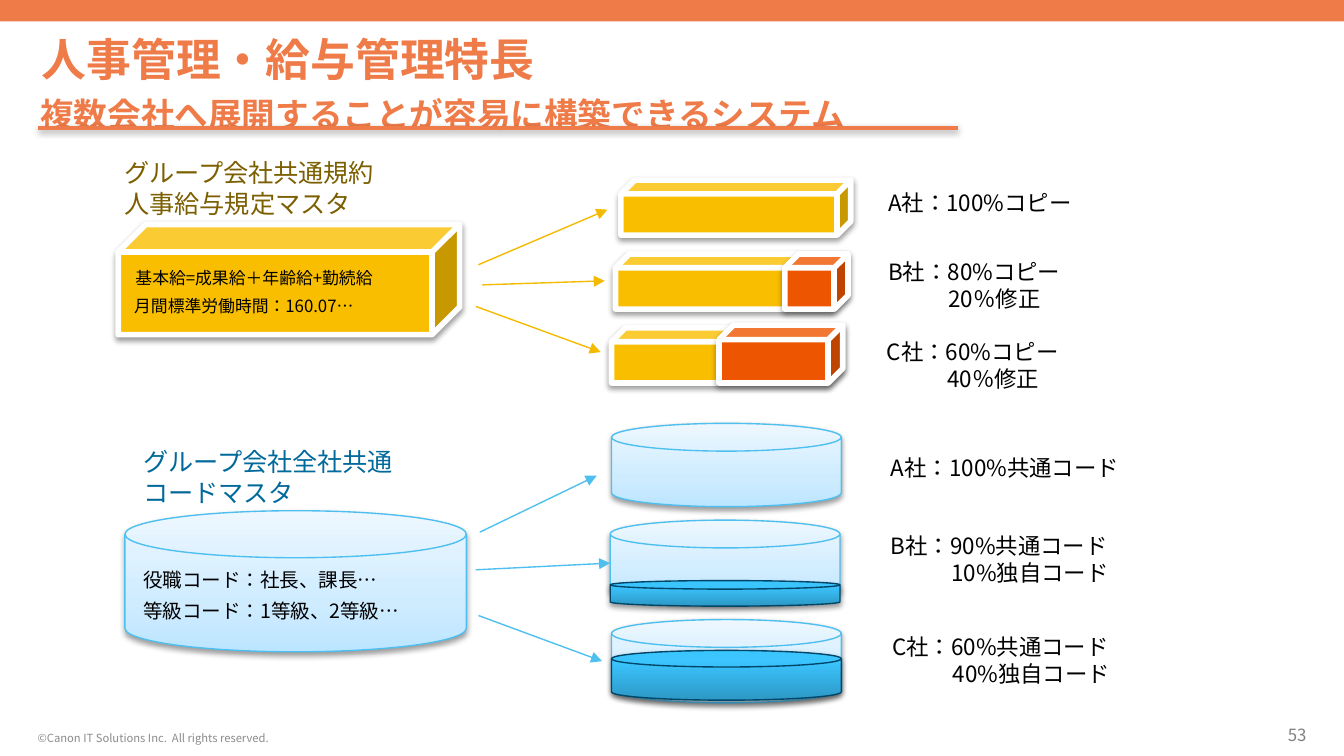
from lxml import etree
from pptx import Presentation
from pptx import util as u
from pptx.dml.color import RGBColor
from pptx.enum import lang, shapes, text
from pptx.oxml.ns import qn

Inches = u.Inches
FONT = "Noto Sans CJK JP"
ORANGE, BLACK = "EE7B48", "000000"
GOLD, RED, ARROW_GOLD = "F9BE00", "EE5500", "F4BA00"
SKY, NAVY = "4EBFEF", "004668"
PALE_STOPS = [(0, "BCE5FF"), (35, "CFECFF"), (100, "EDF7FF")]
DEEP_STOPS = [(0, "2D98C5"), (80, "3BC5FF"), (100, "3CC6FF")]


def tint(fill, colour):
    fill.solid()
    fill.fore_color.rgb = RGBColor.from_string(colour)


def write(frame, lines, size, colour, leading=None, bold=False, second_indent=0):
    frame.word_wrap = True
    for i, line in enumerate(lines):
        paragraph = frame.paragraphs[0] if i == 0 else frame.add_paragraph()
        properties = paragraph._p.get_or_add_pPr()
        properties.set("marL", str(Inches(second_indent if i else 0)))
        properties.set("indent", "0")
        etree.SubElement(properties, qn("a:buNone"))
        paragraph.space_before = u.Pt(0)
        if leading:
            paragraph.line_spacing = u.Pt(leading)
        run = paragraph.add_run()
        run.text = line
        run.font.size = u.Pt(size)
        run.font.bold = bold
        run.font.name = FONT
        run.font.language_id = lang.MSO_LANGUAGE_ID.JAPANESE
        tint(run.font.fill, colour)
        etree.SubElement(run._r.get_or_add_rPr(), qn("a:ea"), typeface=FONT)


deck = Presentation()
deck.slide_width, deck.slide_height = Inches(10), Inches(10 * 9 / 16)
slide = deck.slides.add_slide(deck.slide_layouts[1])
shadowed = []

heading = slide.shapes.title
heading.left, heading.top = Inches(0.31), Inches(0.24)
heading.width, heading.height = Inches(7.87), Inches(0.39)
heading_frame = heading.text_frame
heading_frame.margin_left = heading_frame.margin_right = 0
heading_frame.margin_top = heading_frame.margin_bottom = 0
heading_frame.vertical_anchor = text.MSO_ANCHOR.MIDDLE
heading_frame.auto_size = text.MSO_AUTO_SIZE.NONE
write(heading_frame, ["人事管理・給与管理特長"], 24, ORANGE, bold=True)
heading_frame.paragraphs[0].alignment = text.PP_ALIGN.LEFT

subheading = slide.placeholders[1]
subheading.left, subheading.top = Inches(0.2), Inches(0.65)
subheading.width, subheading.height = Inches(6.69), Inches(0.34)
subheading.text_frame.auto_size = text.MSO_AUTO_SIZE.NONE
write(subheading.text_frame, ["複数会社へ展開することが容易に構築できるシステム"],
      18, ORANGE, leading=21.5, bold=True)

band = slide.shapes.add_shape(shapes.MSO_SHAPE.RECTANGLE, 0, 0, Inches(10), Inches(0.16))
band.shadow.inherit = False
tint(band.fill, ORANGE)
band.line.fill.background()

rule = slide.shapes.add_connector(
    shapes.MSO_CONNECTOR.STRAIGHT, Inches(0.28), Inches(0.95), Inches(7.13), Inches(0.95))
rule.line.width = u.Pt(2)
tint(rule.line.fill, ORANGE)
shadowed.append(rule)

for left, width, content, size, colour, align in [
    (9.33, 0.39, "53", 9, "808080", text.PP_ALIGN.RIGHT),
    (0.28, 2.36, "©Canon IT Solutions Inc.  All rights reserved.", 6, "8C8C8C",
     text.PP_ALIGN.LEFT),
]:
    footer = slide.shapes.add_textbox(
        Inches(left), Inches(5.39), Inches(width), Inches(0.15)).text_frame
    footer.margin_left = footer.margin_right = footer.margin_top = footer.margin_bottom = 0
    footer.vertical_anchor = text.MSO_ANCHOR.BOTTOM
    write(footer, [content], size, colour)
    footer.paragraphs[0].alignment = align

for left, top, width, height, colour in [
    (0.88, 1.67, 2.54, 0.82, GOLD),
    (4.55, 2.44, 1.71, 0.41, GOLD),
    (4.58, 1.89, 1.71, 0.41, GOLD),
    (4.62, 1.34, 1.71, 0.41, GOLD),
    (5.84, 1.89, 0.47, 0.41, RED),
    (5.35, 2.42, 0.92, 0.43, RED),
]:
    rules_block = slide.shapes.add_shape(
        shapes.MSO_SHAPE.CUBE, Inches(left), Inches(top), Inches(width), Inches(height))
    tint(rules_block.fill, colour)
    tint(rules_block.line.fill, "FFFFFF")
    rules_block.line.width = u.Pt(3)
    shadowed.append(rules_block)

for left, top, width, height, stops, outline in [
    (0.93, 3.8, 2.54, 1.05, PALE_STOPS, SKY),
    (4.55, 3.15, 1.71, 0.62, PALE_STOPS, SKY),
    (4.54, 3.87, 1.71, 0.62, PALE_STOPS, SKY),
    (4.55, 4.61, 1.71, 0.62, PALE_STOPS, SKY),
    (4.54, 4.32, 1.71, 0.19, DEEP_STOPS, NAVY),
    (4.55, 4.84, 1.71, 0.37, DEEP_STOPS, NAVY),
]:
    code_store = slide.shapes.add_shape(
        shapes.MSO_SHAPE.FLOWCHART_MAGNETIC_DISK,
        Inches(left), Inches(top), Inches(width), Inches(height))
    code_store.fill.gradient()
    code_store.fill.gradient_angle = 90
    stop_list = code_store._element.spPr.find(qn("a:gradFill")).find(qn("a:gsLst"))
    for old_stop in list(stop_list):
        stop_list.remove(old_stop)
    for position, colour in stops:
        stop = etree.SubElement(stop_list, qn("a:gs"), pos=str(position * 1000))
        etree.SubElement(stop, qn("a:srgbClr"), val=colour)
    tint(code_store.line.fill, outline)
    code_store.line.width = u.Pt(0.75)
    shadowed.append(code_store)

for part in shadowed:
    effects = etree.SubElement(part._element.spPr, qn("a:effectLst"))
    shadow = etree.SubElement(
        effects, qn("a:outerShdw"), blurRad=str(u.Pt(3.1)), dist=str(u.Pt(1.6)),
        dir="5400000", rotWithShape="0")
    shade = etree.SubElement(shadow, qn("a:srgbClr"), val=BLACK)
    etree.SubElement(shade, qn("a:alpha"), val="38000")

for left, top, width, height, size, leading, colour, lines in [
    (0.83, 1.12, 2.97, 0.66, 13.5, 16.5, "7C5F00", ["グループ会社共通規約", "人事給与規定マスタ"]),
    (0.97, 3.27, 2.66, 0.66, 13.5, 16.5, "00699B", ["グループ会社全社共通", "コードマスタ"]),
    (0.97, 4.18, 2.66, 0.33, 10.5, 12.6, BLACK, ["役職コード：社長、課長…"]),
    (0.97, 4.41, 2.66, 0.33, 10.5, 12.6, BLACK, ["等級コード：1等級、2等級…"]),
    (0.91, 1.94, 2.66, 0.3, 9, 10.8, BLACK, ["基本給=成果給＋年齢給+勤続給"]),
    (0.9, 2.15, 2.66, 0.3, 9, 10.8, BLACK, ["月間標準労働時間：160.07…"]),
    (6.51, 1.36, 2.16, 0.36, 12, 14.4, BLACK, ["A社：100%コピー"]),
    (6.51, 1.87, 2.16, 0.6, 12, 14.4, BLACK, ["B社：80%コピー", "20％修正"]),
    (6.5, 2.47, 2.16, 0.6, 12, 14.4, BLACK, ["C社：60%コピー", "40％修正"]),
    (6.53, 3.33, 2.48, 0.36, 12, 14.4, BLACK, ["A社：100%共通コード"]),
    (6.53, 3.91, 2.16, 1.08, 12, 14.4, BLACK, ["B社：90%共通コード", "10%独自コード"]),
    (6.54, 4.66, 2.16, 1.08, 12, 14.4, BLACK, ["C社：60%共通コード", "40%独自コード"]),
]:
    label = slide.shapes.add_textbox(
        Inches(left), Inches(top), Inches(width), Inches(height))
    write(label.text_frame, lines, size, colour, leading,
          second_indent=0.45 if size == 12 else 0)

for start_x, start_y, end_x, end_y, colour in [
    (3.56, 1.97, 4.52, 1.56, ARROW_GOLD),
    (3.59, 2.12, 4.5, 2.09, ARROW_GOLD),
    (3.54, 2.28, 4.47, 2.62, ARROW_GOLD),
    (3.57, 3.96, 4.44, 3.54, SKY),
    (3.54, 4.24, 4.54, 4.19, SKY),
    (3.56, 4.58, 4.48, 4.92, SKY),
]:
    rollout = slide.shapes.add_connector(
        shapes.MSO_CONNECTOR.STRAIGHT,
        Inches(start_x), Inches(start_y), Inches(end_x), Inches(end_y))
    tint(rollout.line.fill, colour)
    rollout.line.width = u.Pt(0.75)
    etree.SubElement(rollout._element.spPr.find(qn("a:ln")), qn("a:tailEnd"), type="triangle")
    etree.SubElement(rollout._element.spPr, qn("a:effectLst"))

deck.save("out.pptx")
